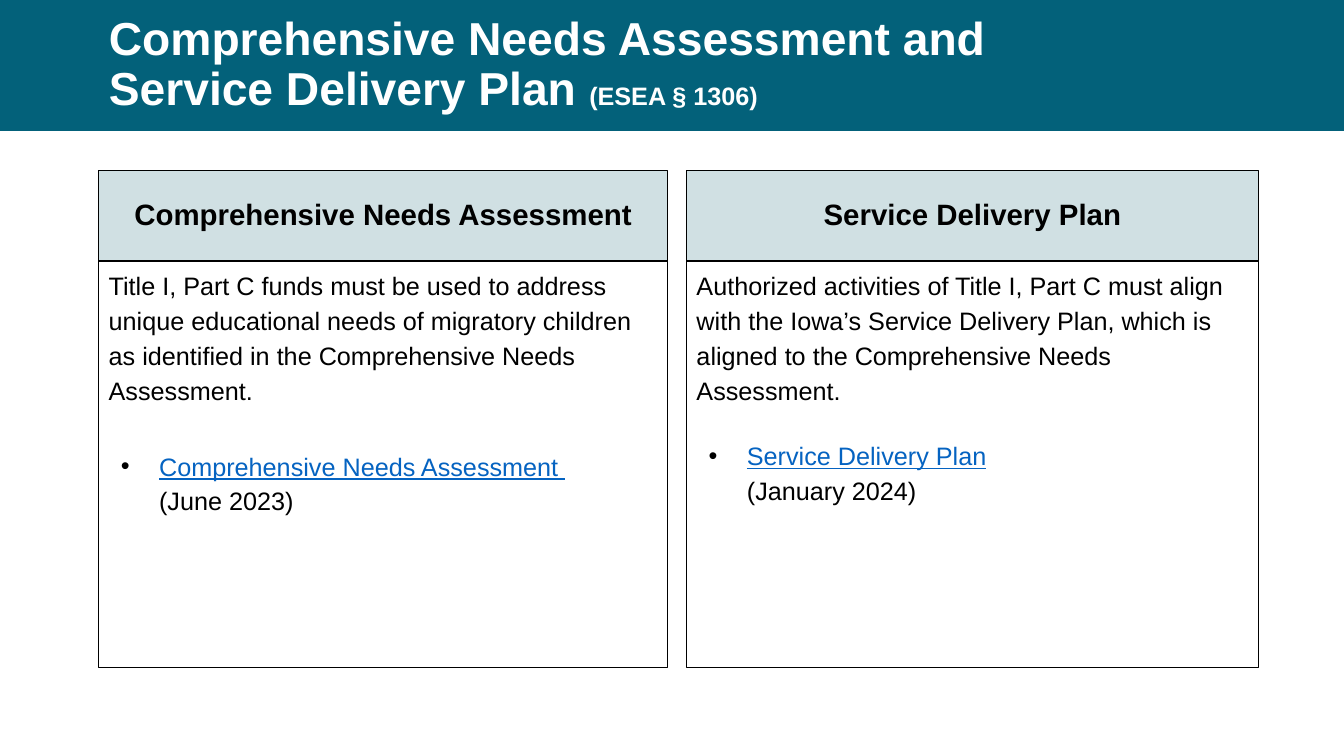
"""Build the Comprehensive Needs Assessment and Service Delivery Plan slide."""
from lxml import etree
from pptx import Presentation
from pptx.dml.color import RGBColor
from pptx.enum.shapes import MSO_SHAPE
from pptx.enum.text import MSO_ANCHOR, MSO_AUTO_SIZE, PP_ALIGN
from pptx.oxml.ns import qn
from pptx.util import Inches, Pt

TEAL = RGBColor(0x03, 0x61, 0x7A)
PALE = RGBColor(0xD0, 0xE0, 0xE3)
BLUE = RGBColor(0x05, 0x63, 0xC1)
BLACK = RGBColor(0, 0, 0)
WHITE = RGBColor(0xFF, 0xFF, 0xFF)


def set_font(item, size, color, bold=False):
    item.font.name = "Arial"
    item.font.size = Pt(size)
    item.font.color.rgb = color
    item.font.bold = bold


def add_panel(left, top, width, height, fill=None):
    sp = s.shapes.add_textbox(Inches(left), Inches(top), Inches(width), Inches(height))
    sp.line.color.rgb = BLACK
    sp.line.width = Pt(0.75)
    if fill is not None:
        sp.fill.solid()
        sp.fill.fore_color.rgb = fill
    sp.text_frame.word_wrap = True
    return sp.text_frame


prs = Presentation()
prs.slide_width = Inches(13.33)
prs.slide_height = Inches(7.5)
s = prs.slides.add_slide(prs.slide_layouts[5])

band = s.shapes.add_shape(MSO_SHAPE.RECTANGLE, 0, 0, prs.slide_width, Inches(1.3))
band.shadow.inherit = False
band.fill.solid()
band.fill.fore_color.rgb = TEAL
band.line.fill.background()

title = s.shapes.title
title.element.addprevious(band.element)
title.left, title.top = Inches(0.98), Inches(0)
title.width, title.height = Inches(11.5), Inches(1.3)
tf = title.text_frame
tf.text = "Comprehensive Needs Assessment and\nService Delivery Plan "
tf.auto_size = MSO_AUTO_SIZE.NONE
tf.vertical_anchor = MSO_ANCHOR.MIDDLE
for p in tf.paragraphs:
    p.alignment = PP_ALIGN.LEFT
    p.line_spacing = 0.9
    p.space_before = Pt(0)
    set_font(p.runs[0], 33, WHITE, True)
r = tf.paragraphs[1].add_run()
r.text = "(ESEA § 1306)"
set_font(r, 18, WHITE, True)

columns = [
    (0.98, 5.64, "Comprehensive Needs Assessment",
     "Title I, Part C funds must be used to address unique educational needs of "
     "migratory children as identified in the Comprehensive Needs Assessment.",
     "Comprehensive Needs Assessment ", "(June 2023)", 29.5),
    (6.81, 5.67, "Service Delivery Plan",
     "Authorized activities of Title I, Part C must align with the Iowa’s Service "
     "Delivery Plan, which is aligned to the Comprehensive Needs Assessment.",
     "Service Delivery Plan", "(January 2024)", 22),
]
for left, width, heading, body, link, date, gap in columns:
    tf = add_panel(left, 1.69, width, 0.9, PALE)
    tf.text = heading
    tf.vertical_anchor = MSO_ANCHOR.MIDDLE
    p = tf.paragraphs[0]
    p.alignment = PP_ALIGN.CENTER
    p.line_spacing = 0.9
    set_font(p.runs[0], 21, BLACK, True)

    tf = add_panel(left, 2.59, width, 4.03)
    tf.text = body
    p = tf.paragraphs[0]
    p.line_spacing = 1.15
    set_font(p.runs[0], 18, BLACK)

    p = tf.add_paragraph()
    p.line_spacing = 1.15
    p.space_before = Pt(gap)
    pPr = p._p.get_or_add_pPr()
    pPr.set("marL", str(Inches(0.5)))
    pPr.set("indent", str(Inches(-0.38)))
    color = etree.SubElement(pPr, qn("a:buClr"))
    etree.SubElement(color, qn("a:srgbClr")).set("val", str(BLACK))
    etree.SubElement(pPr, qn("a:buFont")).set("typeface", "Arial")
    etree.SubElement(pPr, qn("a:buChar")).set("char", "•")
    set_font(p, 18, BLACK)
    p.text = f"{link}\v{date}"
    for r, ink in zip(p.runs, (BLUE, BLACK)):
        set_font(r, 18, ink)
    p.runs[0].font.underline = True

prs.save("out.pptx")
